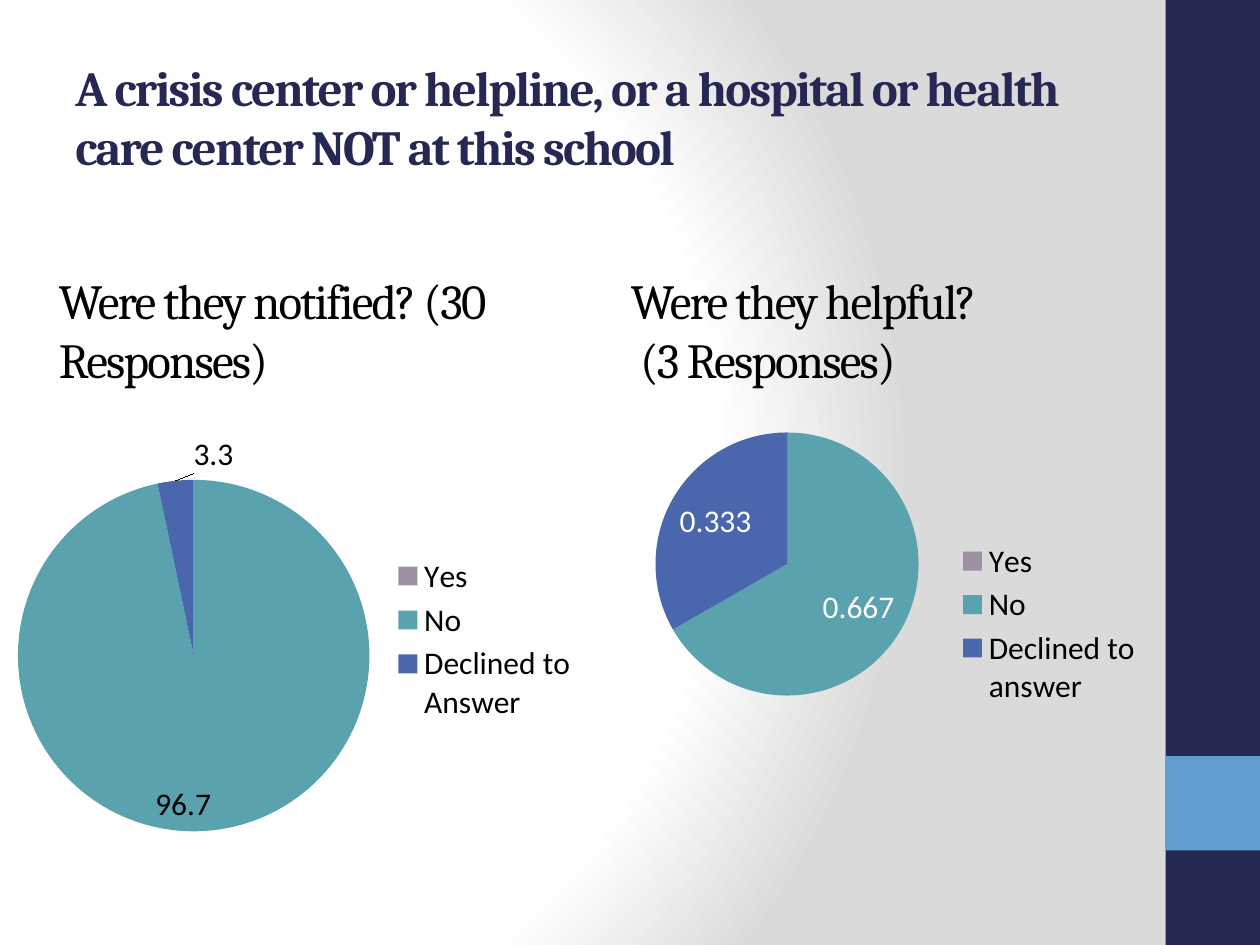
from lxml import etree
from pptx import Presentation, util as u
from pptx.chart.data import CategoryChartData
from pptx.dml.color import RGBColor
from pptx.enum import chart as ch, shapes, text
from pptx.oxml import parse_xml
from pptx.oxml.ns import nsdecls, qn

THEME = dict(
    head="Cambria", body="Calibri", big=28, small=18,
    navy="242852", sky="629DD1", black="000000", white="FFFFFF", gray="DADADA",
    pie=("9D90A0", "5AA2AE", "4A66AC"),
)
WIDE, HIGH = 10, 7.5
UNIT = WIDE * 0.075

BANDS = [("navy", 0, HIGH), ("sky", 8 * UNIT, UNIT)]
TEXTS = [
    ("A crisis center or helpline, or a hospital or health care center NOT at this school",
     (0.5, 0.3, 8.33, 1.25), "navy", True),
    ("Were they notified? (30 Responses)", (0.37, 1.99, 3.63, 1.25), "black", False),
    ("Were they helpful?\n (3 Responses)", (4.91, 1.99, 3.63, 1.25), "black", False),
]
CHARTS = [
    dict(box=(0, 3.13, 4.66, 3.77), cats=("Yes", "No", "Declined to Answer"),
         vals=(0, 96.7, 3.3), form="0.0;;;", ink="black",
         plot=(0.03, 0.18, 0.6, 0.74), key=(0.66, 0.33, 0.33, 0.37), out=(2, 0.1, 0)),
    dict(box=(4.66, 2.96, 4.47, 3.94), cats=("Yes", "No", "Declined to answer"),
         vals=(0, 0.667, 0.333), form="0.000;;;", ink="white",
         plot=(0.12, 0.12, 0.47, 0.53), key=(0.65, 0.33, 0.34, 0.35), out=None),
]


def tint(name):
    return RGBColor.from_string(THEME.get(name, name))


def apply(item, **vals):
    for name, val in vals.items():
        setattr(item, name, val)


def style(font, face, size, ink, **more):
    apply(font, name=THEME[face], size=u.Pt(THEME[size]), **more)
    font.color.rgb = tint(ink)


def paint(fill, ink):
    fill.solid()
    fill.fore_color.rgb = tint(ink)


def back(slide):
    slide.background.fill.gradient()
    old = slide.element.find(".//" + qn("a:gradFill"))
    stops = "".join(
        f'<a:gs pos="{pos * 1000}"><a:srgbClr val="{THEME[ink]}"/></a:gs>'
        for pos, ink in ((0, "white"), (75, "white"), (100, "gray")))
    new = parse_xml(
        f'<a:gradFill {nsdecls("a")} rotWithShape="1"><a:gsLst>{stops}</a:gsLst>'
        '<a:path path="circle"><a:fillToRect l="20000" t="50000" r="100000" b="50000"/>'
        '</a:path></a:gradFill>')
    old.getparent().replace(old, new)


def layout(sizes, inner=False, edge=True):
    root = etree.Element(qn("c:layout"))
    man = etree.SubElement(root, qn("c:manualLayout"))
    parts = [("layoutTarget", "inner")] if inner else []
    parts += [("xMode", "edge"), ("yMode", "edge")] if edge else []
    parts += zip("xywh", sizes)
    for tag, val in parts:
        etree.SubElement(man, qn("c:" + tag)).set("val", str(val))
    return root


def place(host, node, after=None):
    for old in host.findall(qn("c:layout")):
        host.remove(old)
    if after is None:
        host.insert(0, node)
    else:
        host.find(qn(after)).addnext(node)


def pie(slide, box, cats, vals, form, ink, plot, key, out):
    data = CategoryChartData()
    data.categories = cats
    data.add_series("Series 1", vals)
    chart = slide.shapes.add_chart(
        ch.XL_CHART_TYPE.PIE, *map(u.Inches, box), data).chart
    apply(chart, has_title=False, has_legend=True)
    style(chart.font, "body", "small", "black")
    apply(chart.legend, position=ch.XL_LEGEND_POSITION.RIGHT, include_in_layout=False)
    style(chart.legend.font, "body", "small", "black")
    area = chart.plots[0]
    area.vary_by_categories = True
    ser = area.series[0]
    for i, hue in enumerate(THEME["pie"]):
        paint(ser.points[i].format.fill, hue)
    tags = ser.data_labels
    apply(tags, show_value=True, show_percentage=False, number_format=form,
          number_format_is_linked=False, position=ch.XL_LABEL_POSITION.INSIDE_END)
    style(tags.font, "body", "small", ink)
    root = chart.element
    if out:
        spot, *move = out
        tag = ser.points[spot].data_label
        style(tag.font, "body", "small", ink)
        tag.position = ch.XL_LABEL_POSITION.OUTSIDE_END
        place(root.find(".//" + qn("c:dLbl")), layout(move, edge=False), "c:idx")
        root.find(".//" + qn("c:showLeaderLines")).set("val", "1")
    place(root.find(".//" + qn("c:plotArea")), layout(plot, inner=True))
    place(root.find(".//" + qn("c:legend")), layout(key), "c:legendPos")


def main():
    deck = Presentation()
    apply(deck, slide_width=u.Inches(WIDE), slide_height=u.Inches(HIGH))
    slide = deck.slides.add_slide(deck.slide_layouts[6])
    back(slide)
    for ink, top, high in BANDS:
        band = slide.shapes.add_shape(
            shapes.MSO_SHAPE.RECTANGLE,
            *map(u.Inches, (WIDE - UNIT, top, UNIT, high)))
        band.shadow.inherit = False
        paint(band.fill, ink)
        band.line.fill.background()
    for words, box, ink, bold in TEXTS:
        frame = slide.shapes.add_textbox(*map(u.Inches, box)).text_frame
        apply(frame, text=words, word_wrap=True,
              vertical_anchor=text.MSO_ANCHOR.MIDDLE)
        for para in frame.paragraphs:
            for run in para.runs:
                style(run.font, "head", "big", ink, bold=bold)
                run.font._element.set("spc", "-100")
    for item in CHARTS:
        pie(slide, **item)
    deck.save("out.pptx")


if __name__ == "__main__":
    main()
